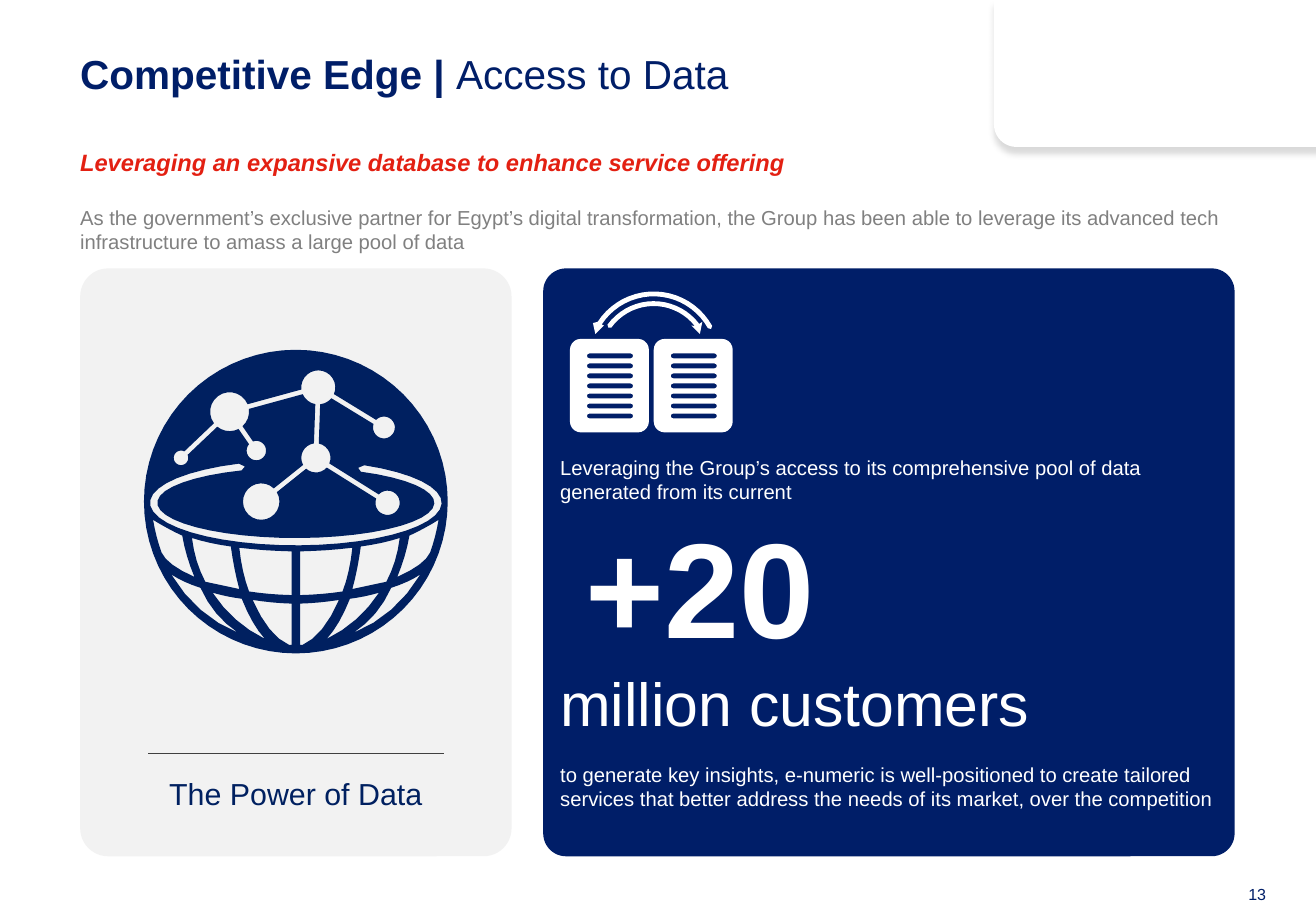
from math import atan2, ceil, cos, degrees, radians, sin

from lxml import etree
from pptx import Presentation
from pptx.dml.color import RGBColor
from pptx.enum.shapes import MSO_CONNECTOR, MSO_SHAPE
from pptx.enum.text import MSO_ANCHOR, PP_ALIGN
from pptx.oxml import parse_xml
from pptx.oxml.ns import nsdecls, qn
from pptx.util import Inches, Pt

ROUNDED, DIAGONAL = MSO_SHAPE.ROUNDED_RECTANGLE, MSO_SHAPE.ROUND_2_DIAG_RECTANGLE
STRAIGHT = MSO_CONNECTOR.STRAIGHT
TOP, MIDDLE, BOTTOM = MSO_ANCHOR.TOP, MSO_ANCHOR.MIDDLE, MSO_ANCHOR.BOTTOM
LEFT, CENTER, RIGHT = PP_ALIGN.LEFT, PP_ALIGN.CENTER, PP_ALIGN.RIGHT

THEME = {
    "font": "Arial",
    "navy": "001E68", "globe": "002060", "red": "E32012", "gray": "808080",
    "panel": "F2F2F2", "white": "FFFFFF", "rule": "404040",
    "title": 24, "subtitle": 14, "body": 12, "caption": 18,
    "figure": 80, "unit": 36, "page": 9.5,
}

# Content: a paragraph is (runs, paragraph format), a run is (text, size, colour, font format)
TITLE = [([("Competitive Edge | ", "title", "navy", {"bold": True}),
           ("Access to Data", "title", "navy", {"bold": False})], {"line_spacing": 0.9})]
SUBTITLE = [([("Leveraging an expansive database to enhance service offering",
               "subtitle", "red", {"bold": True, "italic": True})], {})]
INTRO = [([("As the government’s exclusive partner for Egypt’s digital transformation, "
            "the Group has been able to leverage its advanced tech infrastructure "
            "to amass a large pool of data", "body", "gray", {})], {})]
CAPTION = [([("The Power of Data", "caption", "globe", {})], {"alignment": CENTER})]
STORY = [
    ([("Leveraging the Group’s access to its comprehensive pool of data generated "
       "from its current", "body", "white", {})], {}),
    ([("+20", "figure", "white", {"bold": True})], {"indent": 0.21}),
    ([("million customers", "unit", "white", {})], {}),
    ([("to generate key insights, e-numeric is well-positioned to create tailored "
       "services that better address the needs of its market, over the competition",
       "body", "white", {})], {"space_before": Pt(14)}),
]
PAGE = [([("13", "page", "navy", {})], {"alignment": RIGHT})]

# Globe network: name -> centre x, centre y, radius
NODES = {
    "hub": (1.89, 3.39, 0.16), "peak": (2.62, 3.19, 0.14),
    "east": (3.16, 3.52, 0.09), "inner": (2.11, 3.71, 0.08),
    "west": (1.49, 3.77, 0.06), "core": (2.6, 3.77, 0.12),
    "south east": (3.19, 4.14, 0.1), "south west": (2.15, 4.13, 0.15),
}
LINKS = [("hub", "west"), ("hub", "inner"), ("hub", "peak"), ("peak", "east"),
         ("peak", "core"), ("core", "south west"), ("core", "south east")]
# Grid cells of the globe's left half: corners, with the middle of each edge between them
CELLS = [
    [(1.33, 4.55), (1.29, 4.42), (1.26, 4.28), (1.38, 4.35),
     (1.5, 4.41), (1.54, 4.58), (1.6, 4.75), (1.42, 4.65)],
    [(1.58, 4.43), (1.73, 4.47), (1.9, 4.5), (1.93, 4.68),
     (1.97, 4.85), (1.83, 4.82), (1.69, 4.79), (1.62, 4.62)],
    [(2.4, 4.9), (2.22, 4.89), (2.05, 4.87), (2, 4.7),
     (1.97, 4.51), (2.18, 4.53), (2.4, 4.54), (2.4, 4.72)],
    [(1.41, 4.73), (1.52, 4.79), (1.65, 4.84), (1.78, 5.05), (1.96, 5.21), (1.65, 5.02)],
    [(1.75, 4.88), (1.87, 4.91), (1.99, 4.93), (2.08, 5.12), (2.18, 5.26), (1.94, 5.1)],
    [(2.38, 5.31), (2.22, 5.18), (2.08, 4.94), (2.24, 4.96),
     (2.4, 4.97), (2.4, 5.14), (2.4, 5.31), (2.39, 5.31)],
]
GLOBE_X, GLOBE_Y, GLOBE_R = 2.435, 4.13, 1.25
LINK_HALF = 0.02

prs = Presentation()
prs.slide_width, prs.slide_height = Inches(10.83), Inches(7.5)
slide = prs.slides.add_slide(prs.slide_layouts[5])
shapes = slide.shapes


def rgb(name):
    return RGBColor.from_string(THEME[name])


def write(s, paragraphs, anchor=TOP, insets=(0.1, 0.05, 0.1, 0.05)):
    tf = s.text_frame
    margins = zip(("margin_left", "margin_top", "margin_right", "margin_bottom"), map(Inches, insets))
    for name, value in [("word_wrap", True), ("vertical_anchor", anchor), *margins]:
        setattr(tf, name, value)
    for i, (runs, layout) in enumerate(paragraphs):
        p = tf.paragraphs[0] if i == 0 else tf.add_paragraph()
        for name, value in {"alignment": LEFT, **layout}.items():
            if name == "indent":
                p._p.get_or_add_pPr().set("marL", str(Inches(value)))
            else:
                setattr(p, name, value)
        for text, size, color, style in runs:
            r = p.add_run()
            r.text = text
            for name, value in {"name": THEME["font"], "size": Pt(THEME[size]), **style}.items():
                setattr(r.font, name, value)
            r.font.color.rgb = rgb(color)


def paint(s, fill=None):
    s.shadow.inherit = False
    s.line.fill.background()
    if fill:
        s.fill.solid()
        s.fill.fore_color.rgb = rgb(fill)
    else:
        s.fill.background()
    return s


def add(kind, x, y, w, h, fill=None, adj=0):
    s = shapes.add_shape(kind, *map(Inches, (x, y, w, h)))
    s.adjustments[0] = adj
    return paint(s, fill)


def textbox(x, y, w, h, paragraphs, insets):
    write(shapes.add_textbox(*map(Inches, (x, y, w, h))), paragraphs, insets=insets)


def arc(cx, cy, rx, ry, start, end, step=15):
    n = max(1, ceil(abs(end - start) / step))
    angles = [radians(start + (end - start) * i / n) for i in range(n + 1)]
    return [(cx + rx * cos(a), cy + ry * sin(a)) for a in angles]


def round_box(x, y, w, h, r, step):
    corners = [(x + w - r, y + h - r), (x + r, y + h - r), (x + r, y + r), (x + w - r, y + r)]
    return [p for i, (cx, cy) in enumerate(corners)
            for p in arc(cx, cy, r, r, 90 * i, 90 * i + 90, step)]


def smooth(cell):
    points = []
    for i in range(0, len(cell), 2):
        a, m, b = cell[i], cell[i + 1], cell[(i + 2) % len(cell)]
        near, far = [tuple(0.375 * p + 0.75 * q - 0.125 * r for p, q, r in zip(u, m, v))
                     for u, v in ((a, b), (b, a))]
        points += [a, near, m, far]
    return points


def network(node, parent):
    """Outline of the node and all beyond it, seen from its parent."""
    x, y, r = NODES[node]
    near = [b if a == node else a for a, b in LINKS if node in (a, b)]
    angle = {n: degrees(atan2(NODES[n][1] - y, NODES[n][0] - x)) for n in near}
    gap = degrees(LINK_HALF / r)
    base = angle.pop(parent)
    points, at = [], base + gap
    for turn, n in sorted(((a - base) % 360, n) for n, a in angle.items()):
        points += arc(x, y, r, r, at, base + turn - gap) + network(n, node)
        at = base + turn + gap
    return points + arc(x, y, r, r, at, base + 360 - gap)


def outline(contours, fill):
    fb = None
    for contour in contours:
        pts = [(Inches(x), Inches(y)) for x, y in contour]
        if fb is None:
            fb = shapes.build_freeform(*pts[0])
        else:
            fb.move_to(*pts[0])
        fb.add_line_segments(pts[1:], close=True)
    paint(fb.convert_to_shape(), fill)


# Corner tab with its shadow
tab = add(DIAGONAL, 8.18, 0, 2.9, 1.21, "white", 0.153)
tab._element.spPr.find(qn("a:xfrm")).set("flipV", "1")
tab._element.spPr.replace(tab._element.spPr.find(qn("a:effectLst")), parse_xml(
    f'<a:effectLst {nsdecls("a")}><a:outerShdw blurRad="{Pt(4)}" dist="{Pt(4)}" '
    'dir="5400000" algn="t" rotWithShape="0"><a:srgbClr val="000000">'
    '<a:alpha val="14000"/></a:srgbClr></a:outerShdw></a:effectLst>'))

# Heading and page number
title = shapes.title
for side, value in zip(("left", "top", "width", "height"), (0.66, 0.45, 6.16, 0.76)):
    setattr(title, side, Inches(value))
write(title, TITLE, insets=(0, 0, 0.1, 0.05))
textbox(0.66, 1.22, 5.96, 0.42, SUBTITLE, (0, 0, 0, 0))
textbox(0.66, 1.64, 9.5, 0.5, INTRO, (0, 0.05, 0, 0.05))
textbox(7.52, 7.23, 2.9, 0.26, PAGE, (0.1, 0.05, 0, 0.05))

# Two cards
write(add(ROUNDED, 0.66, 2.21, 3.55, 4.84, "panel", 0.065), CAPTION, BOTTOM, (0.1, 0.05, 0.1, 0.3))
add(ROUNDED, 4.47, 2.21, 5.69, 4.84, "navy", 0.039)
write(add(ROUNDED, 4.47, 3.37, 5.69, 3.68, adj=0.039), STORY, MIDDLE)

# Globe: a disc with the network, the ring and the grid cells cut out
disc = arc(GLOBE_X, GLOBE_Y, GLOBE_R, GLOBE_R, 0, 360, 5)
ring = (arc(GLOBE_X, 4.14, 1.2, 0.35, -62, 247, 8) + arc(GLOBE_X, 4.14, 1.17, 0.32, 249, 249)
        + arc(GLOBE_X, 4.14, 1.14, 0.29, 247, -62, 8) + arc(GLOBE_X, 4.14, 1.17, 0.32, -64, -64))
left_cells = [smooth(cell) for cell in CELLS]
right_cells = [[(2 * GLOBE_X - x, y) for x, y in cell] for cell in left_cells]
web = network("west", "hub") + network("hub", "west")
outline([disc, web, ring, *left_cells, *right_cells], "globe")

# Exchange arrows above the pages
outline([arc(5.38, 2.95, 0.55, 0.55, 213, 331, 6) + arc(5.38, 2.95, 0.53, 0.53, 333, 333)
         + arc(5.38, 2.95, 0.51, 0.51, 331, 213, 6)
         + [(4.97, 2.68), (4.9, 2.75), (4.88, 2.66)]], "white")
outline([arc(5.38, 2.95, 0.47, 0.47, 216, 323, 6)
         + [(5.78, 2.65), (5.76, 2.75), (5.69, 2.68)]
         + arc(5.38, 2.95, 0.43, 0.43, 322, 216, 6)
         + arc(5.38, 2.95, 0.45, 0.45, 214, 214)], "white")

# Data pages with seven text lines cut out
for left in (4.69, 5.38):
    slots = [round_box(left + 0.14, 2.91 + 0.0825 * row, 0.38, 0.04, 0.02, 45) for row in range(7)]
    outline([round_box(left, 2.79, 0.65, 0.77, 0.09, 18), *slots], "white")

# Rule above the caption
rule = shapes.add_connector(STRAIGHT, *map(Inches, (1.22, 6.2, 3.65, 6.2)))
rule.line.color.rgb = rgb("rule")
rule.line.width = Pt(0.5)
etree.SubElement(rule._element.spPr, qn("a:effectLst"))

prs.save("out.pptx")
